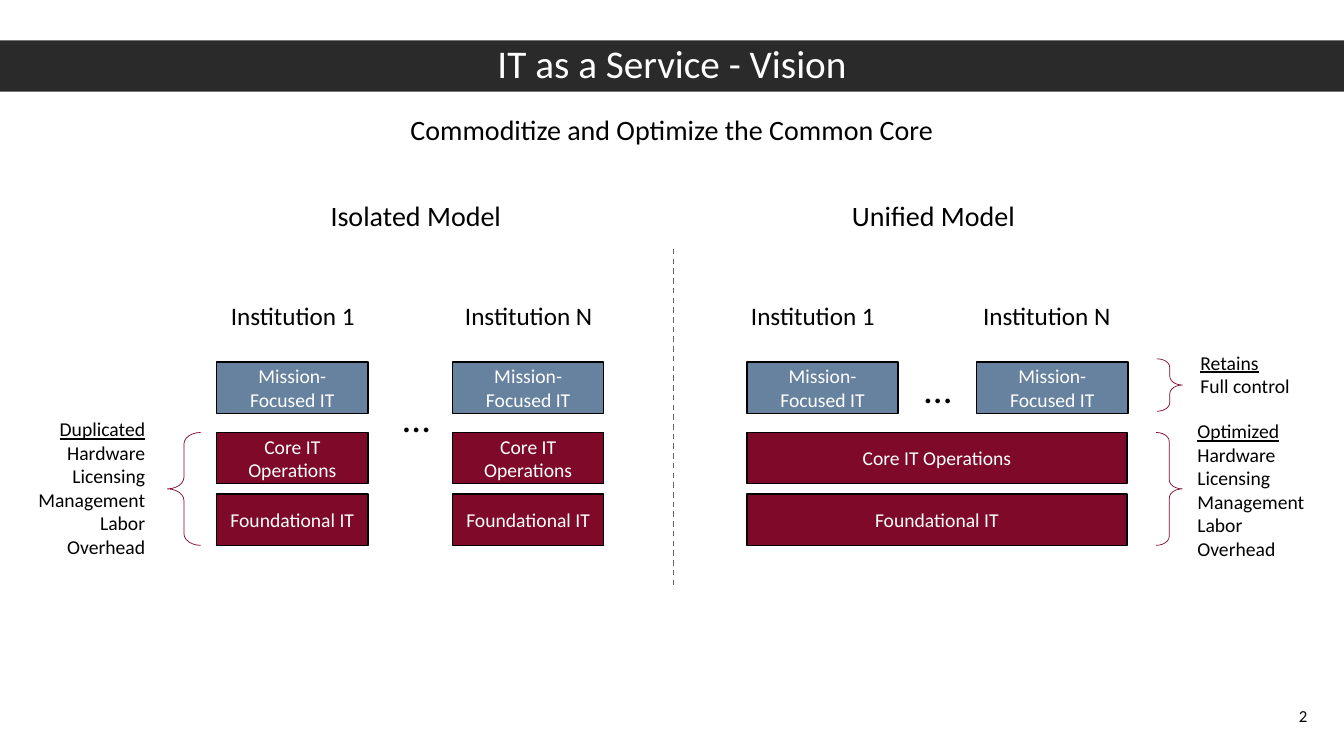
"""Build the slide comparing the isolated and unified models of IT as a service."""
from dataclasses import dataclass

from lxml.etree import SubElement
from pptx import Presentation
from pptx.dml.color import RGBColor
from pptx.enum.dml import MSO_LINE
from pptx.enum.shapes import MSO_CONNECTOR, MSO_SHAPE
from pptx.enum.text import MSO_ANCHOR, PP_ALIGN
from pptx.oxml.ns import qn
from pptx.util import Inches, Pt

SLIDE_WIDTH, SLIDE_HEIGHT = Inches(13.33), Inches(7.5)
COLUMNS, ROWS = 40, 30
FONT = "Calibri"
BLACK, WHITE, CHARCOAL, GRAY = "000000", "FFFFFF", "2A2A2A", "646464"
MAROON, BLUE = "7E0928", "67829F"
CENTER, LEFT, RIGHT = PP_ALIGN.CENTER, PP_ALIGN.LEFT, PP_ALIGN.RIGHT
TOP, MIDDLE = MSO_ANCHOR.TOP, MSO_ANCHOR.MIDDLE

MISSION_ROW, CORE_ROW, FOUNDATION_ROW = 14.36, 17.16, 19.6
BLOCK_WIDTH, SHARED_WIDTH, BLOCK_HEIGHT = 4.5, 11.31, 2.04
NAME_ROW, NAME_WIDTH, NAME_HEIGHT = 11.72, 5.37, 1.6
LIST_WIDTH = 3.87
SAVINGS = ("Hardware", "Licensing", "Management", "Labor", "Overhead")


@dataclass(frozen=True)
class Area:
    column: float
    row: float
    width: float
    height: float

    def lengths(self) -> tuple:
        return (across(self.column), down(self.row), across(self.width), down(self.height))


@dataclass(frozen=True)
class Label:
    area: Area
    lines: tuple
    size: int
    align: PP_ALIGN = CENTER
    anchor: MSO_ANCHOR = TOP
    heading: bool = False
    wrap: bool = True


@dataclass(frozen=True)
class Block:
    area: Area
    text: str
    fill: str


@dataclass(frozen=True)
class Brace:
    area: Area
    rotation: int = 0


@dataclass(frozen=True)
class Institution:
    name: str
    block_column: float
    name_column: float
    isolated: bool


INSTITUTIONS = (
    Institution("Institution 1", 6.45, 6.03, True),
    Institution("Institution N", 13.47, 13.05, True),
    Institution("Institution 1", 22.23, 21.51, False),
    Institution("Institution N", 29.07, 28.47, False),
)

LABELS = (
    Label(Area(10.29, 4.28, 19.41, 2), ("Commoditize and Optimize the Common Core",), 20, wrap=False),
    Label(Area(6.09, 7.68, 12.57, 1.76), ("Isolated Model",), 20),
    Label(Area(21.48, 7.68, 12.6, 1.76), ("Unified Model",), 20),
    Label(Area(11.49, 15.4, 1.8, 2.28), ("…",), 28, anchor=MIDDLE),
    Label(Area(27.06, 14.24, 1.71, 2.28), ("…",), 28, anchor=MIDDLE),
    Label(Area(0.75, 16.36, LIST_WIDTH, 6.04), ("Duplicated", *SAVINGS), 14, RIGHT, heading=True),
    Label(Area(35.34, 16.44, LIST_WIDTH, 6.04), ("Optimized", *SAVINGS), 14, LEFT, heading=True),
    Label(Area(35.43, 13.72, LIST_WIDTH, 2.28), ("Retains", "Full control"), 14, LEFT, heading=True),
    Label(Area(30.21, 27.6, 9, 1.6), ("2",), 12, RIGHT, MIDDLE),
)

BRACES = (
    Brace(Area(4.98, CORE_ROW, 0.99, 4.48), 180),
    Brace(Area(34.41, CORE_ROW, 0.78, 4.48)),
    Brace(Area(34.44, 14.24, 0.75, 2.08)),
)


def across(columns: float) -> int:
    return round(SLIDE_WIDTH * columns / COLUMNS)


def down(rows: float) -> int:
    return round(SLIDE_HEIGHT * rows / ROWS)


def color(value: str) -> RGBColor:
    return RGBColor.from_string(value)


def write(shape, lines: tuple, size: int, ink: str, align: PP_ALIGN,
          anchor: MSO_ANCHOR, heading: bool = False, wrap: bool = True) -> None:
    frame = shape.text_frame
    frame.word_wrap = wrap
    frame.vertical_anchor = anchor
    for index, line in enumerate(lines):
        paragraph = frame.add_paragraph() if index else frame.paragraphs[0]
        paragraph.alignment = align
        run = paragraph.add_run()
        run.text = line
        run.font.name = FONT
        run.font.size = Pt(size)
        run.font.color.rgb = color(ink)
        run.font.underline = heading and index == 0


def add_label(slide, label: Label) -> None:
    shape = slide.shapes.add_textbox(*label.area.lengths())
    write(shape, label.lines, label.size, BLACK, label.align, label.anchor,
          label.heading, label.wrap)


def add_rectangle(slide, area: Area, fill: str):
    shape = slide.shapes.add_shape(MSO_SHAPE.RECTANGLE, *area.lengths())
    shape.shadow.inherit = False
    shape.fill.solid()
    shape.fill.fore_color.rgb = color(fill)
    return shape


def add_title(slide, text: str) -> None:
    shape = add_rectangle(slide, Area(0, 1.6, COLUMNS, BLOCK_HEIGHT), CHARCOAL)
    shape.line.fill.background()
    write(shape, (text,), 28, WHITE, CENTER, MIDDLE)
    shape.text_frame.paragraphs[0].line_spacing = 0.9


def add_block(slide, block: Block) -> None:
    shape = add_rectangle(slide, block.area, block.fill)
    shape.line.color.rgb = color(BLACK)
    shape.line.width = Pt(1)
    write(shape, (block.text,), 14, WHITE, CENTER, MIDDLE)


def add_core(slide, column: float, width: float) -> None:
    for row, text in ((FOUNDATION_ROW, "Foundational IT"), (CORE_ROW, "Core IT Operations")):
        add_block(slide, Block(Area(column, row, width, BLOCK_HEIGHT), text, MAROON))


def add_institution(slide, institution: Institution) -> None:
    column = institution.block_column
    if institution.isolated:
        add_core(slide, column, BLOCK_WIDTH)
    mission = Area(column, MISSION_ROW, BLOCK_WIDTH, BLOCK_HEIGHT)
    add_block(slide, Block(mission, "Mission-Focused IT", BLUE))
    name_area = Area(institution.name_column, NAME_ROW, NAME_WIDTH, NAME_HEIGHT)
    add_label(slide, Label(name_area, (institution.name,), 18))


def add_brace(slide, brace: Brace) -> None:
    shape = slide.shapes.add_shape(MSO_SHAPE.RIGHT_BRACE, *brace.area.lengths())
    shape.shadow.inherit = False
    shape.rotation = brace.rotation
    shape.adjustments[0] = 0.35
    shape.adjustments[1] = 0.5
    shape.fill.background()
    shape.line.color.rgb = color(MAROON)
    shape.line.width = Pt(0.5)


def add_divider(slide, column: float, first_row: float, last_row: float) -> None:
    divider = slide.shapes.add_connector(MSO_CONNECTOR.STRAIGHT, across(column), down(first_row),
                                         across(column), down(last_row))
    divider.line.color.rgb = color(GRAY)
    divider.line.width = Pt(1)
    divider.line.dash_style = MSO_LINE.DASH
    SubElement(divider._element.spPr, qn("a:effectLst"))


def main() -> None:
    presentation = Presentation()
    presentation.slide_width, presentation.slide_height = SLIDE_WIDTH, SLIDE_HEIGHT
    slide = presentation.slides.add_slide(presentation.slide_layouts[6])
    add_title(slide, "IT as a Service - Vision")
    add_divider(slide, 20.04, 9.88, 23.36)
    for brace in BRACES:
        add_brace(slide, brace)
    for label in LABELS:
        add_label(slide, label)
    add_core(slide, INSTITUTIONS[2].block_column, SHARED_WIDTH)
    for institution in INSTITUTIONS:
        add_institution(slide, institution)
    presentation.save("out.pptx")


if __name__ == "__main__":
    main()
